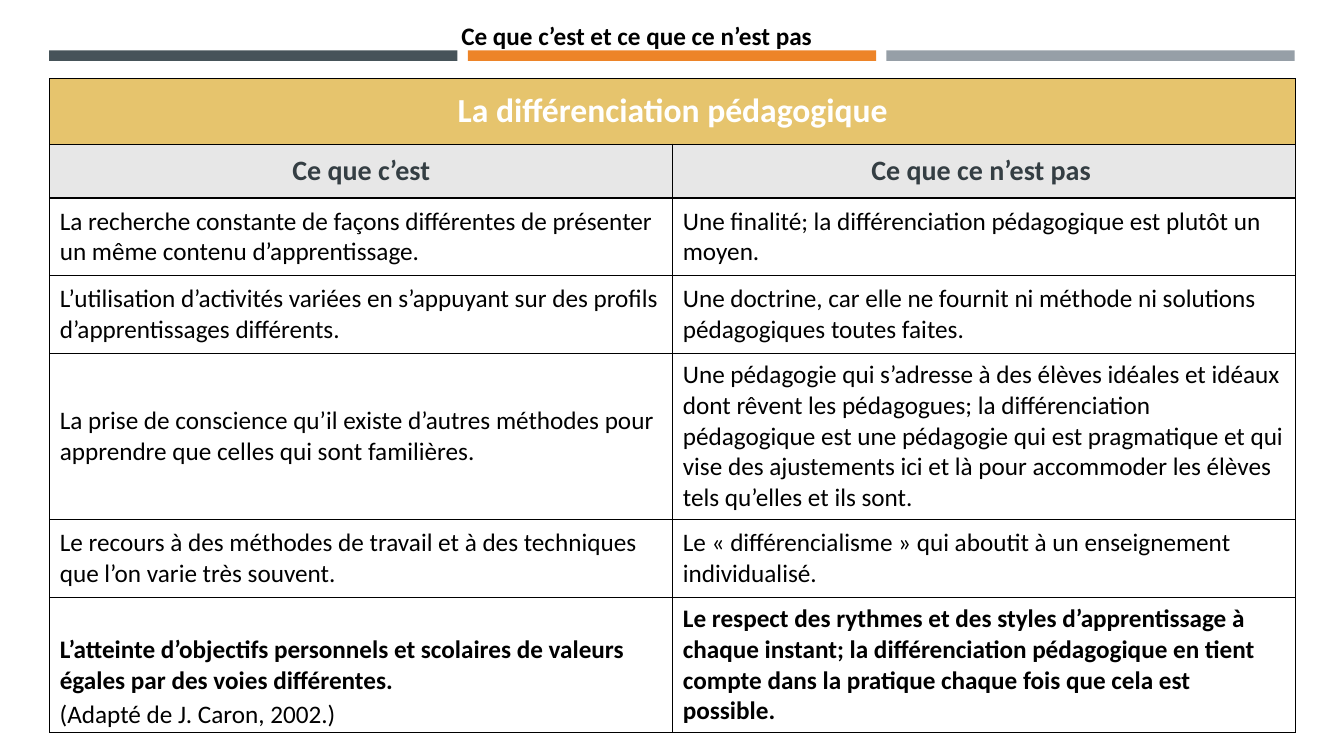
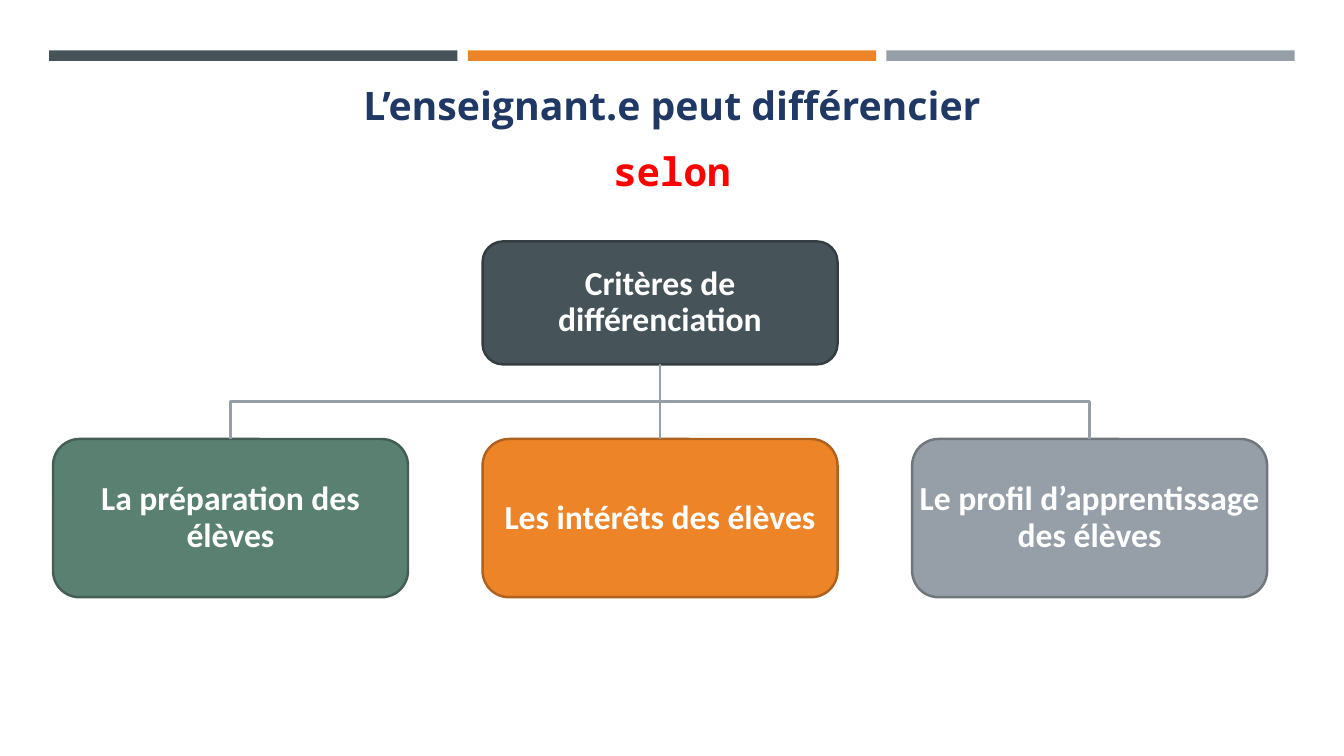
import pptx
import pptx.util
import pptx.dml.color
import pptx.enum.shapes
import pptx.enum.text
import pptx.oxml
import pptx.oxml.ns

RGB = pptx.dml.color.RGBColor
KIND = pptx.enum.shapes.MSO_SHAPE
LINE = pptx.enum.shapes.MSO_CONNECTOR.STRAIGHT
ALIGN = pptx.enum.text.PP_ALIGN
ANCHOR = pptx.enum.text.MSO_ANCHOR
FIT = pptx.enum.text.MSO_AUTO_SIZE
Pt = pptx.util.Pt

SLATE = RGB(0x46, 0x53, 0x59)
ORANGE = RGB(0xED, 0x84, 0x28)
GREY = RGB(0x96, 0x9F, 0xA7)
GREEN = RGB(0x5A, 0x80, 0x71)
SLATE_EDGE = RGB(0x34, 0x3D, 0x42)
ORANGE_EDGE = RGB(0xAF, 0x62, 0x1E)
GREY_EDGE = RGB(0x6F, 0x76, 0x7C)
GREEN_EDGE = RGB(0x43, 0x5F, 0x54)
GOLD = RGB(0xE6, 0xC4, 0x6D)
PALE = RGB(0xE7, 0xE7, 0xE7)
INK = RGB(0x34, 0x3E, 0x43)
NAVY = RGB(0x20, 0x38, 0x64)
RED = RGB(0xFF, 0x00, 0x00)
BLACK = RGB(0x00, 0x00, 0x00)
WHITE = RGB(0xFF, 0xFF, 0xFF)

deck = pptx.Presentation()
deck.slide_width = pptx.util.Inches(13.33)
deck.slide_height = pptx.util.Inches(7.5)
LEFT = 3.7


def grid(x, y, *size):
    """Turn percentages of the slide's width and height, in turn, into lengths."""
    sides = (deck.slide_width, deck.slide_height) * 2
    return [round(side * part / 100) for side, part in zip(sides, (x, y, *size))]


def write(para, text, size, color, bold=True, font="Calibri"):
    run = para.add_run()
    run.text = text
    run.font.name = font
    run.font.size = Pt(size)
    run.font.bold = bold
    run.font.color.rgb = color


layout = deck.slide_layouts.get_by_name("Title Only")
first = deck.slides.add_slide(layout)
second = deck.slides.add_slide(layout)

# Bands, kept on the master for every slide
for i, color in enumerate((SLATE, ORANGE, GREY)):
    band = first.shapes.add_shape(
        KIND.RECTANGLE, *grid(3.66 + i * 31.15, 6.65, 30.38, 1.4))
    band.shadow.inherit = False
    band.fill.solid()
    band.fill.fore_color.rgb = color
    band.line.fill.background()
    deck.slide_master.shapes.element.append(band.element)

# Titles
titles = (
    (first, (33.57, 0, 32.86, 7.47), ALIGN.LEFT, 1.5, 0,
     [("Ce que c’est et ce que ce n’est pas", 18, BLACK, "Calibri")]),
    (second, (3.94, 9.2, 92.12, 17.33), ALIGN.CENTER, 1.15, 8,
     [("L’enseignant.e peut différencier", 28, NAVY, "Open Sans"),
      ("selon", 28, RED, "Noto Sans Mono")]),
)
for slide, area, align, space, after, lines in titles:
    title = slide.shapes.title
    title.left, title.top, title.width, title.height = grid(*area)
    frame = title.text_frame
    frame.auto_size = FIT.NONE
    frame.word_wrap = True
    frame.vertical_anchor = ANCHOR.TOP
    for i, (text, size, color, font) in enumerate(lines):
        para = frame.add_paragraph() if i else frame.paragraphs[0]
        para.alignment = align
        para.line_spacing = space
        para.space_before = Pt(0)
        para.space_after = Pt(after)
        write(para, text, size, color, font=font)

# Table: height, fill, text size, text colour, bold, alignment, texts
HEAD = (8.67, GOLD, 24, WHITE, True, ALIGN.CENTER)
SUB = (7.13, PALE, 20, INK, True, ALIGN.CENTER)
BODY = (WHITE, 18, BLACK, False, ALIGN.LEFT)
LAST = (17.95, WHITE, 18, BLACK, True, ALIGN.LEFT)
rows = (
    (*HEAD, ["La différenciation pédagogique"]),
    (*SUB, ["Ce que c’est", "Ce que ce n’est pas "]),
    (10.27, *BODY, [
        "La recherche constante de façons différentes de présenter un même "
        "contenu d’apprentissage.",
        "Une finalité; la différenciation pédagogique est plutôt un moyen."]),
    (10.27, *BODY, [
        "L’utilisation d’activités variées en s’appuyant sur des profils "
        "d’apprentissages différents.",
        "Une doctrine, car elle ne fournit ni méthode ni solutions "
        "pédagogiques toutes faites."]),
    (22, *BODY, [
        "La prise de conscience qu’il existe d’autres méthodes pour apprendre "
        "que celles qui sont familières.",
        "Une pédagogie qui s’adresse à des élèves idéales et idéaux dont "
        "rêvent les pédagogues; la différenciation pédagogique est une "
        "pédagogie qui est pragmatique et qui vise des ajustements ici et là "
        "pour accommoder les élèves tels qu’elles et ils sont."]),
    (10.27, *BODY, [
        "Le recours à des méthodes de travail et à des techniques que l’on "
        "varie très souvent.",
        "Le « différencialisme » qui aboutit à un enseignement individualisé."]),
    (*LAST, [
        "L’atteinte d’objectifs personnels et scolaires de valeurs égales par "
        "des voies différentes.",
        "Le respect des rythmes et des styles d’apprentissage à chaque "
        "instant; la différenciation pédagogique en tient compte dans la "
        "pratique chaque fois que cela est possible."]),
)
table = first.shapes.add_table(
    len(rows), 2, *grid(LEFT, 10.4, 92.72, 86.56)).table
table.first_row = False
table.horz_banding = False
table.cell(0, 0).merge(table.cell(0, 1))
for r, (height, fill, size, color, bold, align, texts) in enumerate(rows):
    table.rows[r].height = grid(0, height)[1]
    for c in range(2):
        cell = table.cell(r, c)
        props = cell._tc.get_or_add_tcPr()
        for side in "LRTB":
            props.append(pptx.oxml.parse_xml(
                f'<a:ln{side} {pptx.oxml.ns.nsdecls("a")} w="12700"><a:solidFill>'
                f'<a:srgbClr val="{BLACK}"/></a:solidFill></a:ln{side}>'))
        cell.fill.solid()
        cell.fill.fore_color.rgb = fill
        cell.vertical_anchor = ANCHOR.MIDDLE
        if c < len(texts):
            para = cell.text_frame.paragraphs[0]
            para.alignment = align
            write(para, texts[c], size, color, bold)

# Credit under the last row's text
credit = first.shapes.add_textbox(*grid(LEFT, 91.73, 28.51, 5.33)).text_frame
credit.word_wrap = True
credit.vertical_anchor = ANCHOR.MIDDLE
write(credit.paragraphs[0], "(Adapté de J. Caron, 2002.)", 18, BLACK, False)

# Tree: column, top, height, fill, edge, lines of text
nodes = (
    (1, 31.93, 16.27, SLATE, SLATE_EDGE, ["Critères de", "différenciation"]),
    (0, 58.07, 20.93, GREEN, GREEN_EDGE, ["La préparation des", "élèves"]),
    (1, 58.07, 20.93, ORANGE, ORANGE_EDGE, ["Les intérêts des élèves"]),
    (2, 58.07, 20.93, GREY, GREY_EDGE,
     ["Le profil d’apprentissage", "des élèves"]),
)
boxes = []
for col, top, height, fill, edge, lines in nodes:
    box = second.shapes.add_shape(
        KIND.ROUNDED_RECTANGLE, *grid(3.95 + col * 31.96, top, 26.41, height))
    box.shadow.inherit = False
    box.fill.solid()
    box.fill.fore_color.rgb = fill
    box.line.color.rgb = edge
    box.line.width = Pt(1.75)
    frame = box.text_frame
    frame.word_wrap = False
    frame.vertical_anchor = ANCHOR.MIDDLE
    para = frame.paragraphs[0]
    para.alignment = ALIGN.CENTER
    para.line_spacing = 0.9
    for i, text in enumerate(lines):
        if i:
            para.add_line_break()
        write(para, text, 24, WHITE)
    boxes.append(box)

# Branches: straight to the middle box, bent to the outer ones
root, *kids = boxes
stem = root.left + root.width // 2
base = root.top + root.height
for kid in kids:
    mid = kid.left + kid.width // 2
    if kid.left == root.left:
        branch = second.shapes.add_connector(LINE, stem, base, mid, kid.top)
        branch.element.spPr.append(pptx.oxml.parse_xml(
            f'<a:effectLst {pptx.oxml.ns.nsdecls("a")}/>'))
    else:
        fork = (base + kid.top) // 2
        bend = second.shapes.build_freeform(stem, base)
        bend.add_line_segments(
            [(stem, fork), (mid, fork), (mid, kid.top)], close=False)
        branch = bend.convert_to_shape()
        branch.shadow.inherit = False
        branch.fill.background()
    branch.line.color.rgb = GREY
    branch.line.width = Pt(1.75)

deck.save("out.pptx")
